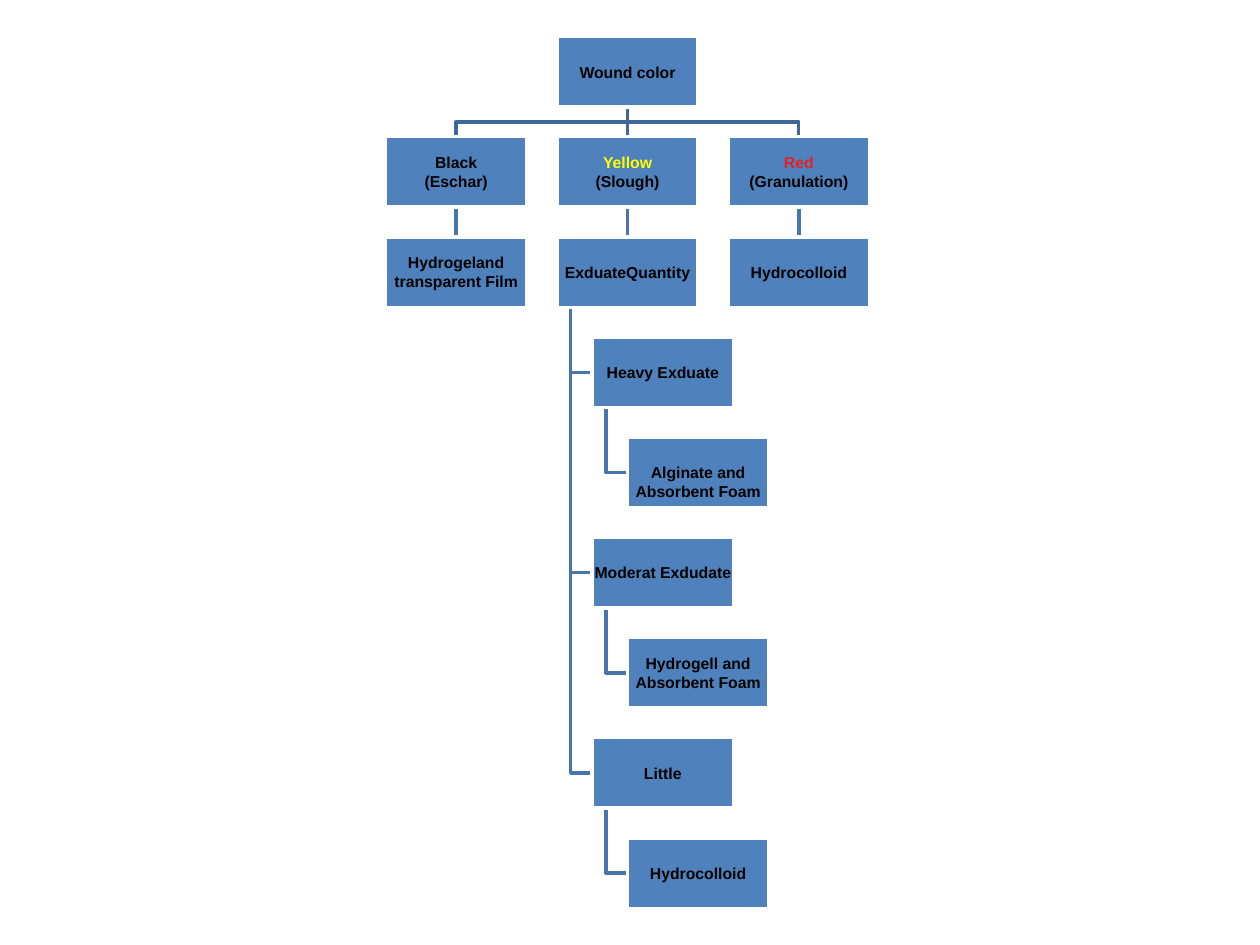
"""Build a wound dressing decision tree as one slide."""
from dataclasses import dataclass
from typing import Optional

from lxml.etree import SubElement
from pptx import Presentation
from pptx.dml.color import RGBColor
from pptx.enum.shapes import MSO_CONNECTOR as Connector, MSO_SHAPE as Preset
from pptx.enum.text import MSO_ANCHOR as Anchor, PP_ALIGN as Align
from pptx.oxml.ns import qn
from pptx.util import Inches, Pt

BOX_WIDTH, BOX_HEIGHT = 1.12, 0.56
FIRST_TOP, LAST_TOP, LAST_ROW = 0.29, 6.65, 8
ROW_PITCH = (LAST_TOP - FIRST_TOP) / LAST_ROW
BLACK_LEFT, YELLOW_LEFT, RED_LEFT = 3.06, 4.42, 5.78
INDENT, STEM_INSET, TEXT_INSET = 0.28, 0.11, 0.01
AMOUNT_LEFT, DRESSING_LEFT = YELLOW_LEFT + INDENT, YELLOW_LEFT + 2 * INDENT
LINE_WIDTH = Pt(2)
BOX_FILL, BOX_LINE, INK = "4F81BD", "FFFFFF", "000000"
TOP_LINK, LOWER_LINK = "3F6797", "4875AC"


@dataclass(frozen=True)
class Step:
    """One box of the tree and the step it follows."""
    left: float
    row: int
    text: str
    parent: Optional["Step"] = None
    first_color: str = INK
    extra_top: float = 0

    @property
    def top(self) -> float:
        """Top edge in inches."""
        return FIRST_TOP + self.row * ROW_PITCH

    @property
    def bottom(self) -> float:
        """Bottom edge in inches."""
        return self.top + BOX_HEIGHT

    @property
    def center(self) -> float:
        """Horizontal centre in inches."""
        return self.left + BOX_WIDTH / 2

    @property
    def middle(self) -> float:
        """Vertical centre in inches."""
        return self.top + BOX_HEIGHT / 2


WOUND = Step(YELLOW_LEFT, 0, "Wound color")
BLACK = Step(BLACK_LEFT, 1, "Black\n(Eschar)", WOUND)
YELLOW = Step(YELLOW_LEFT, 1, "Yellow\n(Slough)", WOUND, "FFFF00")
RED = Step(RED_LEFT, 1, "Red\n(Granulation)", WOUND, "E12323")
QUANTITY = Step(YELLOW_LEFT, 2, "ExduateQuantity", YELLOW)
HEAVY = Step(AMOUNT_LEFT, 3, "Heavy Exduate", QUANTITY)
MODERATE = Step(AMOUNT_LEFT, 5, "Moderat Exdudate", QUANTITY)
LITTLE = Step(AMOUNT_LEFT, 7, "Little", QUANTITY)
STEPS = [
    WOUND,
    BLACK,
    Step(BLACK_LEFT, 2, "Hydrogeland\ntransparent Film", BLACK),
    YELLOW,
    QUANTITY,
    HEAVY,
    Step(DRESSING_LEFT, 4, "Alginate and\nAbsorbent Foam", HEAVY, extra_top=0.15),
    MODERATE,
    Step(DRESSING_LEFT, 6, "Hydrogell and\nAbsorbent Foam", MODERATE),
    LITTLE,
    Step(DRESSING_LEFT, 8, "Hydrocolloid", LITTLE),
    RED,
    Step(RED_LEFT, 2, "Hydrocolloid", RED),
]


def rgb(color: str) -> RGBColor:
    """Turn a hex string into a colour."""
    return RGBColor.from_string(color)


def write(frame, text: str, *, size: float = 9, font: str = "Arial",
          bold: bool = True, color: str = INK, first_color: str = INK,
          extra_top: float = 0) -> None:
    """Write centred lines, the first in its own colour."""
    frame.word_wrap = False
    frame.vertical_anchor = Anchor.MIDDLE
    frame.margin_left = frame.margin_right = frame.margin_bottom = Inches(TEXT_INSET)
    frame.margin_top = Inches(TEXT_INSET + extra_top)
    for number, line in enumerate(text.split("\n")):
        paragraph = frame.add_paragraph() if number else frame.paragraphs[0]
        paragraph.alignment = Align.CENTER
        run = paragraph.add_run()
        run.text = line
        run.font.name, run.font.size, run.font.bold = font, Pt(size), bold
        run.font.color.rgb = rgb(color if number else first_color)


def draw_step(shapes, step: Step):
    """Draw one box with its text."""
    box = shapes.add_shape(Preset.RECTANGLE, Inches(step.left), Inches(step.top),
                           Inches(BOX_WIDTH), Inches(BOX_HEIGHT))
    box.shadow.inherit = False
    box.fill.solid()
    box.fill.fore_color.rgb = rgb(BOX_FILL)
    box.line.color.rgb = rgb(BOX_LINE)
    box.line.width = LINE_WIDTH
    write(box.text_frame, step.text, first_color=step.first_color,
          extra_top=step.extra_top)
    return box


def draw_straight(shapes, parent_box, child_box):
    """Join a box to the one straight below it."""
    link = shapes.add_connector(Connector.STRAIGHT, 0, 0, 0, 0)
    link.begin_connect(parent_box, 2)
    link.end_connect(child_box, 0)
    SubElement(link.line._get_or_add_ln().getparent(), qn("a:effectLst"))
    return link


def draw_bent(shapes, points: list[tuple[float, float]]):
    """Draw an open line through points given in inches."""
    start, *rest = [(Inches(x), Inches(y)) for x, y in points]
    builder = shapes.build_freeform(*start)
    builder.add_line_segments(rest, close=False)
    link = builder.convert_to_shape()
    link.shadow.inherit = False
    link.fill.background()
    return link


def draw_link(shapes, step: Step, boxes: dict) -> None:
    """Link a step to its parent, behind the boxes."""
    parent = step.parent
    if step.left == parent.left:
        link = draw_straight(shapes, boxes[parent], boxes[step])
    elif parent is WOUND:
        turn = (parent.bottom + step.top) / 2
        link = draw_bent(shapes, [(parent.center, parent.bottom), (parent.center, turn),
                                  (step.center, turn), (step.center, step.top)])
    else:
        stem = parent.left + STEM_INSET
        link = draw_bent(shapes, [(stem, parent.bottom), (stem, step.middle),
                                  (step.left, step.middle)])
    link.line.color.rgb = rgb(TOP_LINK if parent is WOUND else LOWER_LINK)
    link.line.width = LINE_WIDTH
    boxes[WOUND]._element.addprevious(link._element)


def main() -> None:
    """Build and save the slide."""
    deck = Presentation()
    deck.slide_width, deck.slide_height = Inches(10), Inches(7.5)
    shapes = deck.slides.add_slide(deck.slide_layouts[6]).shapes
    boxes = {step: draw_step(shapes, step) for step in STEPS}
    for step in STEPS:
        if step.parent:
            draw_link(shapes, step, boxes)
    deck.save("out.pptx")


if __name__ == "__main__":
    main()
